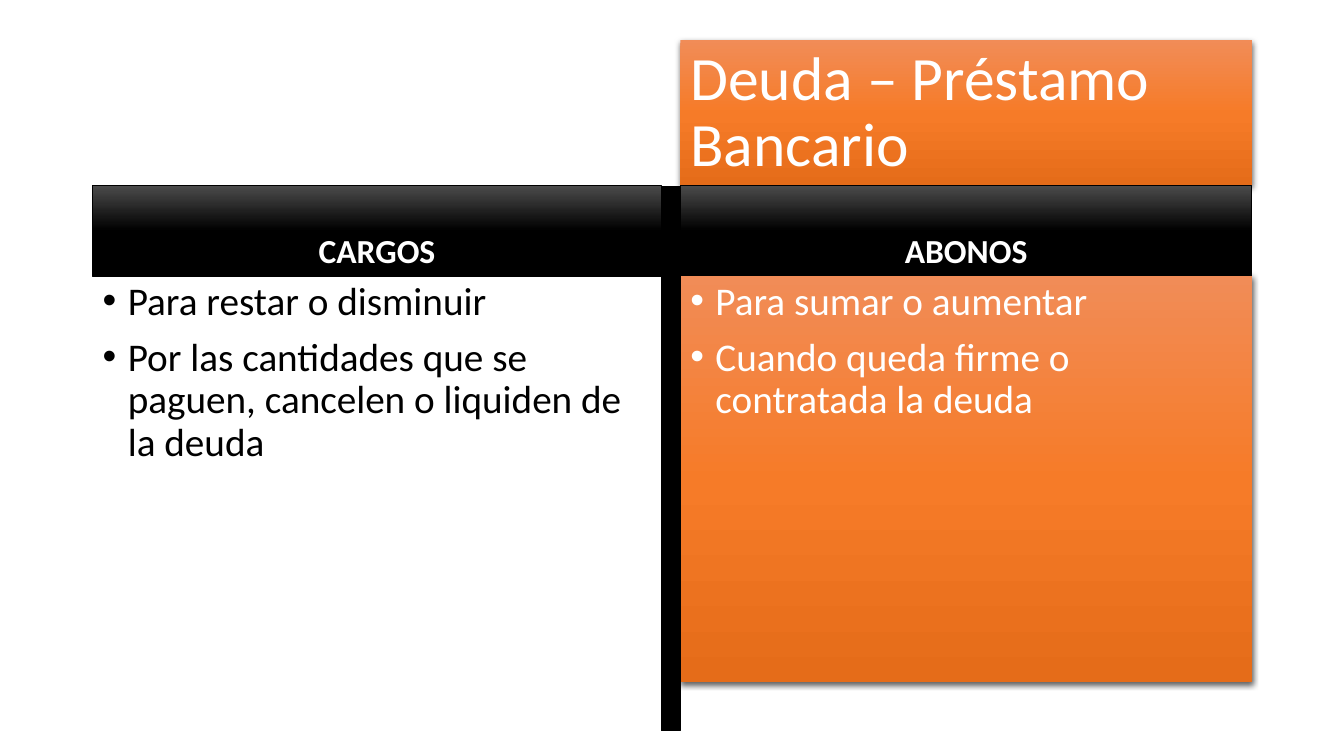
"""Build the slide that compares charges and credits of a bank loan."""
from copy import deepcopy

from lxml.etree import SubElement
from pptx import Presentation
from pptx.dml.color import RGBColor
from pptx.enum.shapes import MSO_SHAPE
from pptx.enum.text import MSO_ANCHOR, MSO_AUTO_SIZE, PP_ALIGN
from pptx.oxml.ns import qn
from pptx.util import Pt

WHITE = RGBColor(0xFF, 0xFF, 0xFF)
BLACK = RGBColor(0x00, 0x00, 0x00)
CHARCOAL = RGBColor(0x4B, 0x4B, 0x4B)
LIGHT_ORANGE = RGBColor(0xF1, 0x8C, 0x57)
ORANGE = RGBColor(0xF6, 0x7B, 0x28)
DARK_ORANGE = RGBColor(0xE5, 0x6C, 0x19)

ORANGE_GRADIENT = (LIGHT_ORANGE, ORANGE, DARK_ORANGE)
BLACK_GRADIENT = (CHARCOAL, BLACK, BLACK)

LEFT_COLUMN = (66.24, 406.08)
RIGHT_COLUMN = (486, 408.24)
TITLE_TOP, TITLE_HEIGHT = 28.8, 104.4
HEADER_TOP, HEADER_HEIGHT = 132.5, 64.8
BODY_TOP, BODY_HEIGHT = HEADER_TOP + HEADER_HEIGHT, 290.2


class AccountSlide:
    """Hold the shared style and the slide being filled."""

    font_name = "Calibri"
    title_format = {"size": Pt(44), "bold": False}
    header_format = {"size": Pt(24), "bold": True}
    body_format = {"size": Pt(28), "bold": False}

    def __init__(self, presentation):
        """Add a title-only slide."""
        self.slide = presentation.slides.add_slide(presentation.slide_layouts[5])

    def place(self, shape, column, top, height):
        """Put a shape in a column."""
        left, width = column
        box = {"left": left, "top": top, "width": width, "height": height}
        for name, value in box.items():
            setattr(shape, name, Pt(value))

    def rectangle(self, column, top, height):
        """Add a rectangle without shadow."""
        shape = self.slide.shapes.add_shape(MSO_SHAPE.RECTANGLE, 0, 0, 0, 0)
        self.place(shape, column, top, height)
        shape.shadow.inherit = False
        return shape

    def outline(self, shape, width):
        """Draw a black outline."""
        shape.line.color.rgb = BLACK
        shape.line.width = Pt(width)

    def gradient(self, shape, colors):
        """Fill a shape from top to bottom with evenly spaced colours."""
        shape.fill.gradient()
        shape.fill.gradient_angle = 270
        stop_list = shape.element.spPr.find(qn("a:gradFill")).find(qn("a:gsLst"))
        stop_list.append(deepcopy(stop_list[-1]))
        for index, (stop, color) in enumerate(zip(shape.fill.gradient_stops, colors)):
            stop.position = index / (len(colors) - 1)
            stop.color.rgb = color

    def drop_shadow(self, shape):
        """Add a soft black shadow below a shape."""
        shape.shadow.inherit = False
        effects = shape.element.spPr.find(qn("a:effectLst"))
        shadow = SubElement(effects, qn("a:outerShdw"), blurRad=str(Pt(4.5)),
                            dist=str(Pt(1.5)), dir="5400000", algn="ctr", rotWithShape="0")
        color = SubElement(shadow, qn("a:srgbClr"), val=str(BLACK))
        SubElement(color, qn("a:alpha"), val="63000")

    def add_text(self, shape, lines, font_format, color, anchor,
                 alignment=PP_ALIGN.LEFT, space_before=0, bulleted=False):
        """Set one paragraph per line."""
        frame = shape.text_frame
        frame_format = {"word_wrap": True, "auto_size": MSO_AUTO_SIZE.NONE,
                        "vertical_anchor": anchor,
                        "margin_left": Pt(7.2), "margin_right": Pt(7.2),
                        "margin_top": Pt(3.6), "margin_bottom": Pt(3.6)}
        for name, value in frame_format.items():
            setattr(frame, name, value)
        frame.text = "\n".join(lines)
        paragraph_format = {"alignment": alignment, "line_spacing": 0.9,
                            "space_before": Pt(space_before)}
        for paragraph in frame.paragraphs:
            for name, value in paragraph_format.items():
                setattr(paragraph, name, value)
            font = paragraph.runs[0].font
            for name, value in {"name": self.font_name, **font_format}.items():
                setattr(font, name, value)
            font.color.rgb = color
            if bulleted:
                self.bullet(paragraph)

    def bullet(self, paragraph):
        """Give a paragraph a hanging bullet."""
        properties = paragraph._p.get_or_add_pPr()
        properties.set("marL", str(Pt(18)))
        properties.set("indent", str(Pt(-18)))
        SubElement(properties, qn("a:buFont"), typeface="Arial")
        SubElement(properties, qn("a:buChar"), char="•")

    def title(self, text):
        """Format the title placeholder as an orange panel."""
        shape = self.slide.shapes.title
        self.place(shape, RIGHT_COLUMN, TITLE_TOP, TITLE_HEIGHT)
        self.gradient(shape, ORANGE_GRADIENT)
        self.drop_shadow(shape)
        self.add_text(shape, [text], self.title_format, WHITE, MSO_ANCHOR.MIDDLE)

    def header(self, column, text):
        """Add the black heading of a column."""
        shape = self.rectangle(column, HEADER_TOP, HEADER_HEIGHT)
        self.gradient(shape, BLACK_GRADIENT)
        self.outline(shape, 0.5)
        self.add_text(shape, [text], self.header_format, WHITE, MSO_ANCHOR.BOTTOM,
                      PP_ALIGN.CENTER, 10)

    def body(self, column, lines, highlighted):
        """Add the bulleted text of a column."""
        if highlighted:
            shape = self.rectangle(column, BODY_TOP, BODY_HEIGHT)
            self.gradient(shape, ORANGE_GRADIENT)
            shape.line.fill.background()
            self.drop_shadow(shape)
        else:
            shape = self.slide.shapes.add_textbox(0, 0, 0, 0)
            self.place(shape, column, BODY_TOP, BODY_HEIGHT)
        self.add_text(shape, lines, self.body_format, WHITE if highlighted else BLACK,
                      MSO_ANCHOR.TOP, space_before=10, bulleted=True)

    def divider(self):
        """Add the black bar between the columns."""
        left = sum(LEFT_COLUMN)
        shape = self.rectangle((left, RIGHT_COLUMN[0] - left), 133.2, 388.8)
        shape.fill.solid()
        shape.fill.fore_color.rgb = BLACK
        self.outline(shape, 1)


def main():
    """Build and save the presentation."""
    presentation = Presentation()
    presentation.slide_width = Pt(960)
    presentation.slide_height = Pt(540)
    account = AccountSlide(presentation)
    account.title("Deuda – Préstamo Bancario")
    columns = (
        (LEFT_COLUMN, "CARGOS", False,
         ["Para restar o disminuir",
          "Por las cantidades que se paguen, cancelen o liquiden de la deuda"]),
        (RIGHT_COLUMN, "ABONOS", True,
         ["Para sumar o aumentar", "Cuando queda firme o contratada la deuda"]),
    )
    for column, heading, highlighted, lines in columns:
        account.header(column, heading)
        account.body(column, lines, highlighted)
    account.divider()
    presentation.save("out.pptx")


if __name__ == "__main__":
    main()
